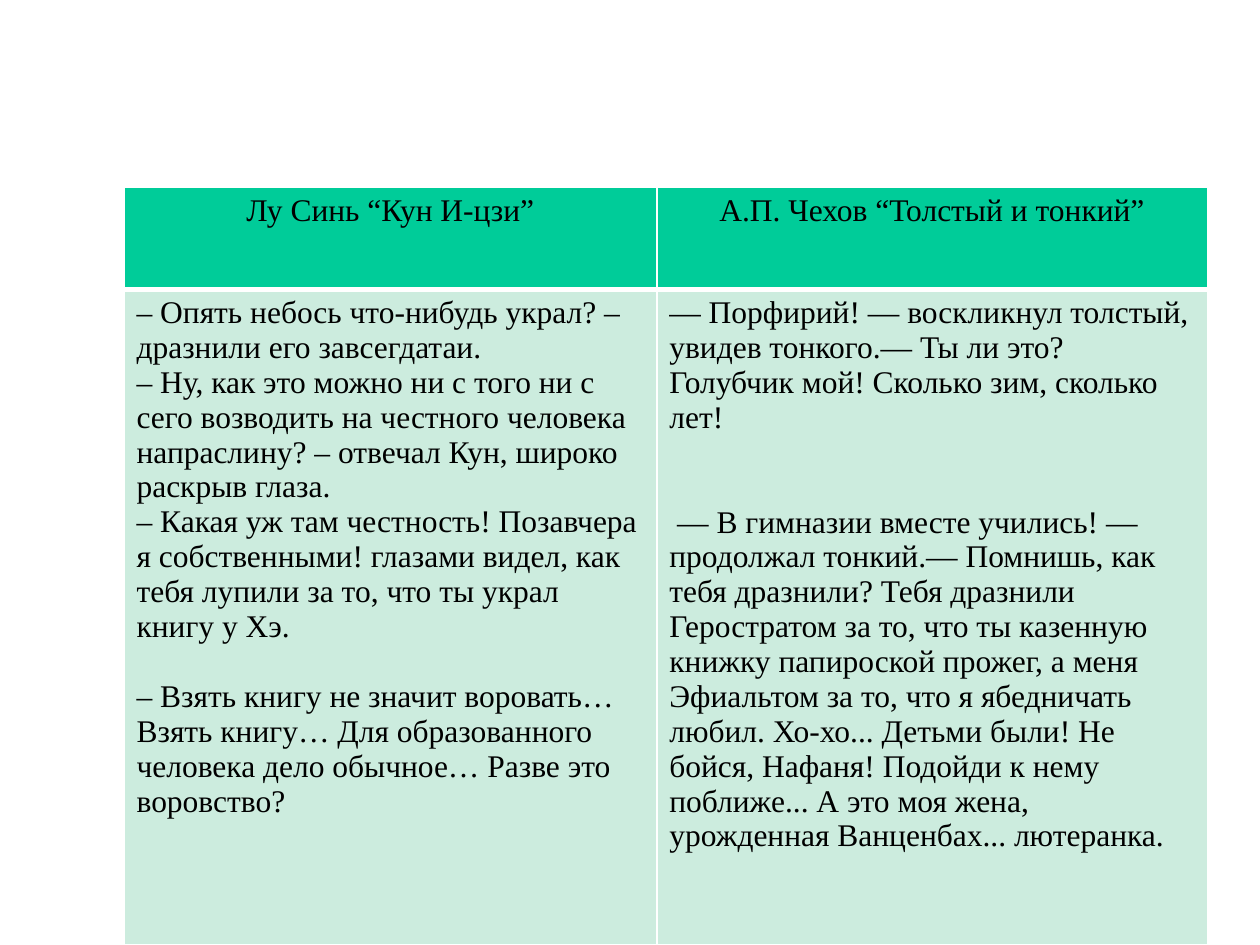
import pptx
import pptx.dml.color
import pptx.enum.text
import pptx.oxml
import pptx.oxml.ns
import pptx.util
from dataclasses import dataclass

Cm, Pt = pptx.util.Cm, pptx.util.Pt
RGB = pptx.dml.color.RGBColor.from_string


@dataclass(frozen=True)
class Theme:
    font: str = "Times New Roman"
    size: int = 18
    line: int = 20
    text: str = "000000"
    header: str = "00CC99"
    body: str = "CCECDE"
    border: str = "FFFFFF"


theme = Theme()

# Each paragraph is (text, number of empty lines left above it).
rows = [
    [
        [("Лу Синь “Кун И-цзи”", 0)],
        [("А.П. Чехов “Толстый и тонкий”", 0)],
    ],
    [
        [
            ("– Опять небось что-нибудь украл? – дразнили его завсегдатаи.", 0),
            ("– Ну, как это можно ни с того ни с сего возводить на честного "
             "человека напраслину? – отвечал Кун, широко раскрыв глаза.", 0),
            ("– Какая уж там честность! Позавчера я собственными! глазами "
             "видел, как тебя лупили за то, что ты украл книгу у Хэ.", 0),
            ("– Взять книгу не значит воровать… Взять книгу… Для "
             "образованного человека дело обычное… Разве это воровство?", 1),
        ],
        [
            ("— Порфирий! — воскликнул толстый, увидев тонкого.— Ты ли это? "
             "Голубчик мой! Сколько зим, сколько лет!", 0),
            (" — В гимназии вместе учились! — продолжал тонкий.— Помнишь, как "
             "тебя дразнили? Тебя дразнили Геростратом за то, что ты казенную "
             "книжку папироской прожег, а меня Эфиальтом за то, что я "
             "ябедничать любил. Хо-хо... Детьми были! Не бойся, Нафаня! "
             "Подойди к нему поближе... А это моя жена, урожденная "
             "Ванценбах... лютеранка.", 2),
        ],
    ],
]
col_widths = [Cm(10.74), Cm(11.1)]
row_heights = [Cm(2.06), Cm(13.21)]


def set_borders(cell, widths):
    """Draw the left, right, top and bottom borders, widths in points."""
    tc_pr = cell._tc.get_or_add_tcPr()
    for i, (side, width) in enumerate(zip("LRTB", widths)):
        ln = pptx.oxml.parse_xml(
            f'<a:ln{side} {pptx.oxml.ns.nsdecls("a")} w="{Pt(width)}">'
            f'<a:solidFill><a:srgbClr val="{theme.border}"/></a:solidFill>'
            f'</a:ln{side}>')
        tc_pr.insert(i, ln)


prs = pptx.Presentation()
prs.slide_width, prs.slide_height = Cm(25.4), Cm(19.05)
s = prs.slides.add_slide(prs.slide_layouts[6])

table = s.shapes.add_table(2, 2, Cm(2.5), Cm(3.77),
                           sum(col_widths), sum(row_heights)).table
for column, width in zip(table.columns, col_widths):
    column.width = width
for row, height in zip(table.rows, row_heights):
    row.height = height

for r_index, row in enumerate(rows):
    is_header = r_index == 0
    for c_index, paragraphs in enumerate(row):
        cell = table.cell(r_index, c_index)
        cell.fill.solid()
        cell.fill.fore_color.rgb = RGB(theme.header if is_header else theme.body)
        set_borders(cell, (1, 1, 1, 3) if is_header else (1, 1, 3, 1))
        tf = cell.text_frame
        tf.text = "\n".join(text for text, _ in paragraphs)
        for p, (_, gap) in zip(tf.paragraphs, paragraphs):
            if is_header:
                p.alignment = pptx.enum.text.PP_ALIGN.CENTER
            if gap:
                p.space_before = Pt(gap * theme.line)
            for r in p.runs:
                r.font.name = theme.font
                r.font.size = Pt(theme.size)
                r.font.bold = False
                r.font.color.rgb = RGB(theme.text)

prs.save("out.pptx")
